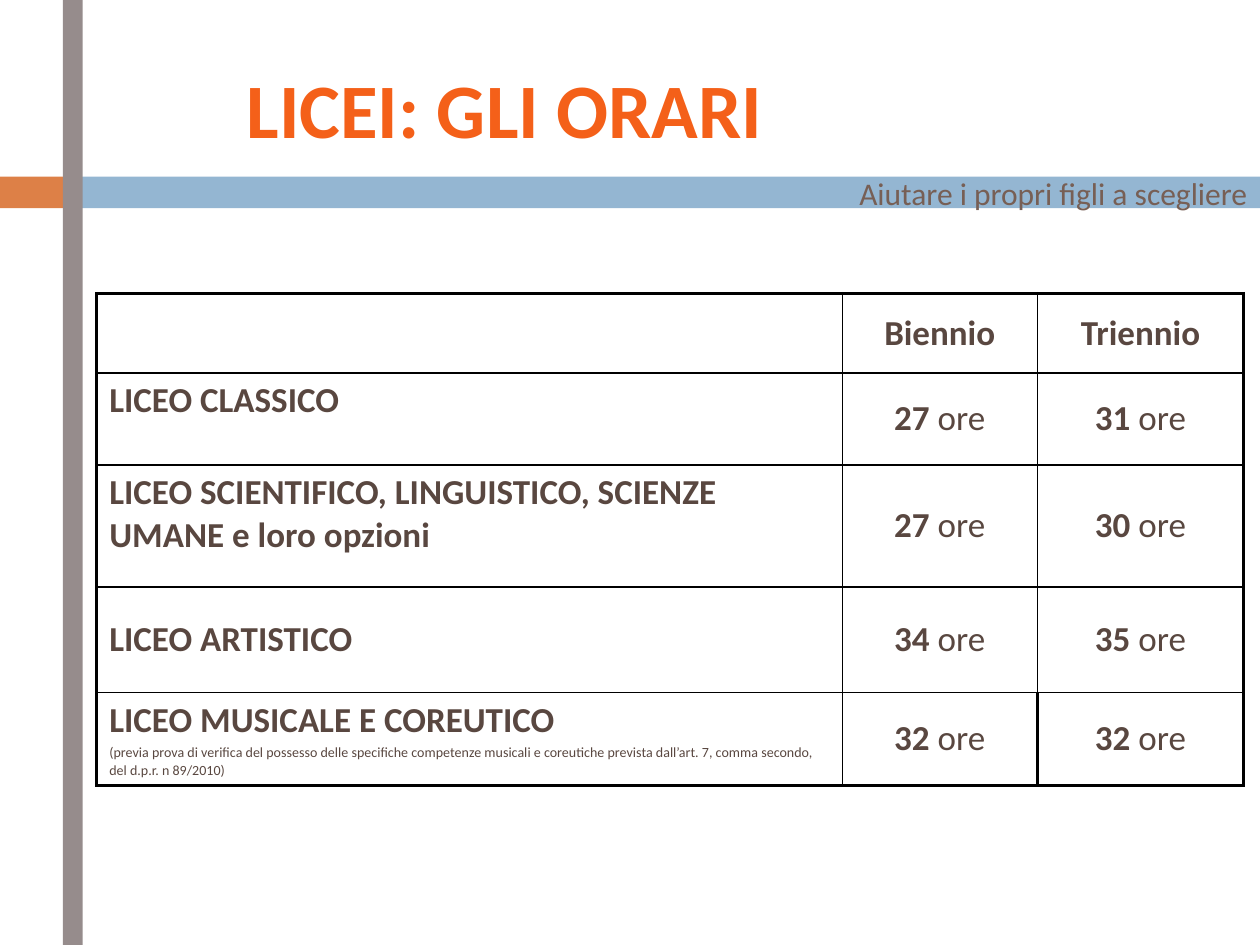
from lxml.etree import SubElement
from pptx import Presentation
from pptx.dml.color import RGBColor
from pptx.enum.shapes import MSO_SHAPE as Shape
from pptx.enum.text import MSO_ANCHOR as Anchor, MSO_AUTO_SIZE as AutoSize, PP_ALIGN as Align
from pptx.oxml.ns import qn
from pptx.util import Cm, Pt

THIN, THICK = 1, 2.25
ORANGE, BROWN, DARK = "F46019", "775F55", "594740"


def color(hex_value):
    return RGBColor.from_string(hex_value)


class SlideBuilder:
    """Holds the shared style and the current slide."""

    font_name = "Calibri"

    def __init__(self, slide):
        self.slide = slide

    def add_runs(self, paragraph, runs, hue, align=Align.LEFT):
        """Fill a paragraph with (text, size, bold) runs."""
        paragraph.alignment = align
        for text, size, bold in runs:
            run = paragraph.add_run()
            run.text = text
            style = {"name": self.font_name, "size": Pt(size), "bold": bold}
            for key, value in style.items():
                setattr(run.font, key, value)
            run.font.color.rgb = color(hue)

    def bar(self, left, top, width, height, fill):
        bar = self.slide.shapes.add_shape(
            Shape.RECTANGLE, Cm(left), Cm(top), Cm(width), Cm(height))
        bar.shadow.inherit = False
        bar.fill.solid()
        bar.fill.fore_color.rgb = color(fill)
        bar.line.fill.background()

    def frame(self, holder, anchor):
        frame = holder.text_frame
        layout = {"word_wrap": True, "auto_size": AutoSize.NONE, "vertical_anchor": anchor}
        for key, value in layout.items():
            setattr(frame, key, value)
        return frame.paragraphs[0]

    def title(self, text, left, top, width, height):
        title = self.slide.shapes.title
        place = {"left": left, "top": top, "width": width, "height": height}
        for key, value in place.items():
            setattr(title, key, Cm(value))
        self.add_runs(self.frame(title, Anchor.TOP), [(text, 44, True)], ORANGE)

    def caption(self, text, left, top, width, height):
        caption = self.slide.shapes.add_textbox(Cm(left), Cm(top), Cm(width), Cm(height))
        self.add_runs(self.frame(caption, Anchor.MIDDLE), [(text, 18, False)], BROWN, Align.RIGHT)

    def table(self, left, top, widths, heights):
        table = self.slide.shapes.add_table(
            len(heights), len(widths), Cm(left), Cm(top),
            Cm(sum(widths)), Cm(sum(heights))).table
        table.first_row = table.horz_banding = False
        for column, width in zip(table.columns, widths):
            column.width = Cm(width)
        for row, height in zip(table.rows, heights):
            row.height = Cm(height)
        return table

    def cell(self, cell, paragraphs, align, anchor, borders):
        """Borders are widths in points: left, right, top, bottom."""
        properties = cell._tc.get_or_add_tcPr()
        for side, width in zip("LRTB", borders):
            line = SubElement(properties, qn(f"a:ln{side}"), w=str(Pt(width)))
            SubElement(SubElement(line, qn("a:solidFill")), qn("a:srgbClr"), val="000000")
        cell.fill.solid()
        cell.fill.fore_color.rgb = color("FFFFFF")
        cell.vertical_anchor = anchor
        for index, runs in enumerate(paragraphs):
            frame = cell.text_frame
            paragraph = frame.add_paragraph() if index else frame.paragraphs[0]
            paragraph.space_before = Pt(0.2 * runs[0][1])
            self.add_runs(paragraph, runs, DARK, align)


def hours(number):
    return [[(number, 20, True), (" ore", 20, False)]]


def heading(text):
    return [[(text, 20, True)]]


def main():
    deck = Presentation()
    deck.slide_width, deck.slide_height = Cm(25.4), Cm(19.05)
    page = SlideBuilder(deck.slides.add_slide(deck.slide_layouts[5]))

    # Background bars
    page.bar(0, 3.56, 1.47, 0.64, "DD8047")
    page.bar(1.65, 3.56, 23.75, 0.64, "94B6D2")
    page.bar(1.27, 0, 0.4, 19.05, "968C8C")

    # Title and caption
    page.title("LICEI: GLI ORARI", 4.72, 1.12, 12.17, 2.13)
    page.caption("Aiutare i propri figli a scegliere", 13.89, 3.56, 11.51, 0.66)

    # Weekly hours by school
    note = ("(previa prova di verifica del possesso delle specifiche competenze musicali "
            "e coreutiche prevista dall’art. 7, comma secondo, del d.p.r. n 89/2010)")
    schools = [
        (heading("LICEO CLASSICO"), "27", "31", Anchor.TOP),
        (heading("LICEO SCIENTIFICO, LINGUISTICO, SCIENZE UMANE e loro opzioni"),
         "27", "30", Anchor.TOP),
        (heading("LICEO ARTISTICO"), "34", "35", Anchor.MIDDLE),
        (heading("LICEO MUSICALE E COREUTICO") + [[(note, 8, False)]],
         "32", "32", Anchor.MIDDLE),
    ]
    rows = [([[], heading("Biennio"), heading("Triennio")], Anchor.MIDDLE)]
    rows += [([name, hours(first), hours(last)], anchor)
             for name, first, last, anchor in schools]

    timetable = page.table(1.95, 5.92, [15.03, 3.93, 4.16], [1.6, 1.85, 2.46, 2.13, 1.85])
    last_row, last_column = len(rows) - 1, 2
    for r, (contents, name_anchor) in enumerate(rows):
        for c, content in enumerate(contents):
            # Thick outer frame, plus the divider between the last two hours
            bottom_row = r == last_row
            thick = (c == 0 or bottom_row and c == last_column,
                     c == last_column or bottom_row and c == 1,
                     r == 0, bottom_row)
            page.cell(timetable.cell(r, c), content,
                      Align.CENTER if c else Align.LEFT,
                      Anchor.MIDDLE if c else name_anchor,
                      [THICK if side else THIN for side in thick])

    deck.save("out.pptx")


if __name__ == "__main__":
    main()
